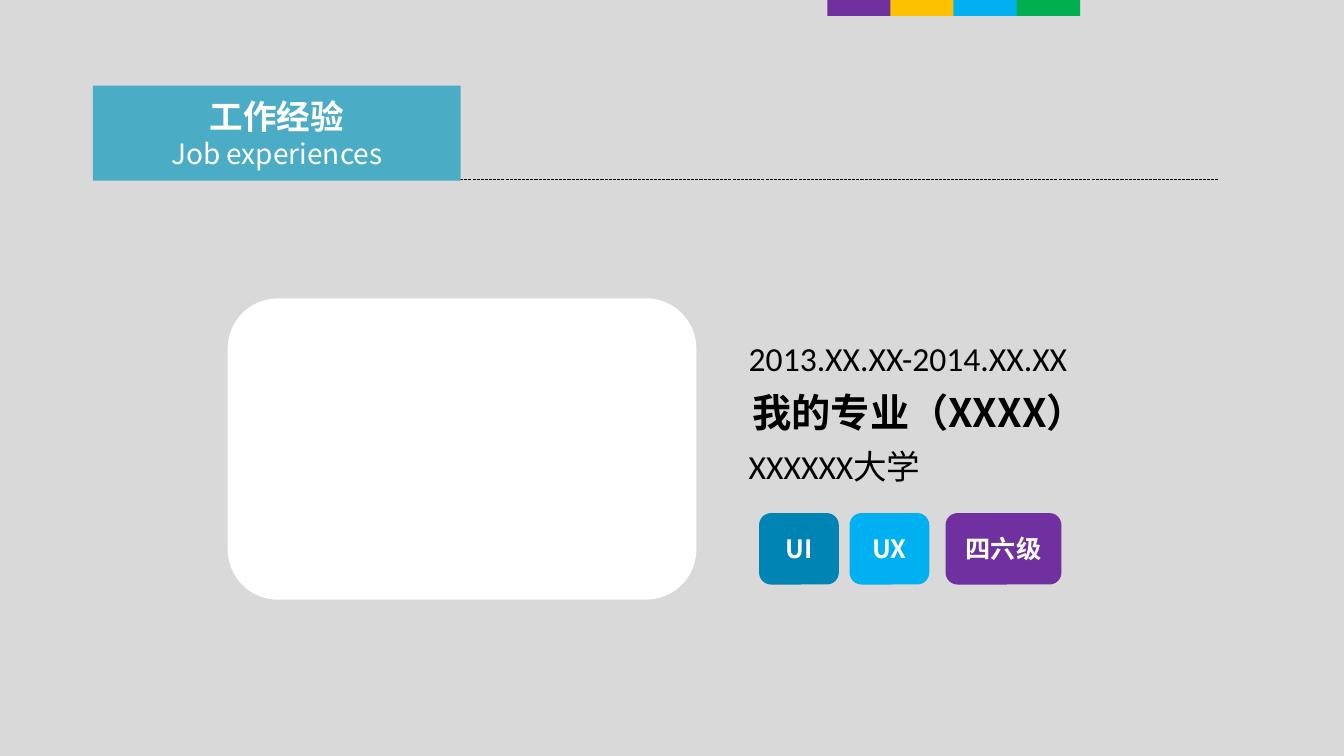
from pptx import Presentation
from pptx.dml.color import RGBColor
from pptx.enum.dml import MSO_LINE
from pptx.enum.shapes import MSO_CONNECTOR, MSO_SHAPE
from pptx.enum.text import MSO_ANCHOR, MSO_AUTO_SIZE, PP_ALIGN
from pptx.oxml.ns import qn
from pptx.util import Cm, Pt
from lxml.etree import SubElement

CJK_FONT = "Noto Sans CJK SC"
color = RGBColor.from_string


def add_block(kind, left, top, width, height, fill):
    block = slide.shapes.add_shape(kind, Cm(left), Cm(top), Cm(width), Cm(height))
    block.shadow.inherit = False
    block.fill.solid()
    block.fill.fore_color.rgb = color(fill)
    block.line.fill.background()
    return block


def write(para, text, size, ink, bold, font=CJK_FONT):
    para.text = text
    for span in para.runs:
        span.font.size = Pt(size)
        span.font.bold = bold
        span.font.color.rgb = color(ink)
        span.font.name = font
        SubElement(span.font._element, qn("a:ea"), typeface=CJK_FONT)


deck = Presentation()
deck.slide_width, deck.slide_height = Cm(33.87), Cm(19.05)
slide = deck.slides.add_slide(deck.slide_layouts[5])
slide.background.fill.solid()
slide.background.fill.fore_color.rgb = color("D9D9D9")

# Colour strip at the top edge
for index, fill in enumerate(["7030A0", "FFC000", "00B0F0", "00B050"]):
    add_block(MSO_SHAPE.RECTANGLE, 20.85 + 1.59 * index, 0, 1.6, 0.4, fill)

# Dashed rule under the heading
rule = slide.shapes.add_connector(
    MSO_CONNECTOR.STRAIGHT, Cm(2.34), Cm(4.52), Cm(30.73), Cm(4.52))
rule.line.color.rgb = color("0D0D0D")
rule.line.width = Pt(0.75)
rule.line.dash_style = MSO_LINE.SQUARE_DOT
SubElement(rule._element.spPr, qn("a:effectLst"))

# Heading, in front of the rule
title = slide.shapes.title
slide.shapes._spTree.append(title._element)
title.left, title.top, title.width, title.height = Cm(2.34), Cm(2.16), Cm(9.27), Cm(2.39)
title.fill.solid()
title.fill.fore_color.rgb = color("4BACC6")
frame = title.text_frame
frame.auto_size = MSO_AUTO_SIZE.NONE
frame.vertical_anchor = MSO_ANCHOR.MIDDLE
write(frame.paragraphs[0], "工作经验", 24, "FFFFFF", True)
write(frame.add_paragraph(), "Job experiences", 20, "FFFFFF", False)
for para in frame.paragraphs:
    para.alignment = PP_ALIGN.CENTER
    para.line_spacing = 1.0
    para.space_before = Pt(0)

# Empty photo panel
add_block(MSO_SHAPE.ROUNDED_RECTANGLE, 5.74, 7.52, 11.81, 7.59, "FFFFFF")

# Period, major and school
details = [
    ("2013.XX.XX-2014.XX.XX", 18.62, 8.38, 9.22, 1.27, 24, False, "Calibri"),
    ("我的专业（XXXX）", 18.72, 9.65, 9.6, 1.45, 28, True, CJK_FONT),
    ("XXXXXX大学", 18.62, 11.1, 5.41, 1.27, 24, False, "Calibri"),
]
for text, left, top, width, height, size, bold, font in details:
    box = slide.shapes.add_textbox(Cm(left), Cm(top), Cm(width), Cm(height))
    box.text_frame.word_wrap = True
    box.text_frame.auto_size = MSO_AUTO_SIZE.SHAPE_TO_FIT_TEXT
    write(box.text_frame.paragraphs[0], text, size, "000000", bold, font)

# Skill badges
badges = [
    ("UI", 19.13, 2.01, "0084B4"),
    ("UX", 21.41, 2.01, "00B0F0"),
    ("四六级", 23.83, 2.92, "7030A0"),
]
for text, left, width, fill in badges:
    badge = add_block(MSO_SHAPE.ROUNDED_RECTANGLE, left, 12.93, width, 1.8, fill)
    badge.text_frame.vertical_anchor = MSO_ANCHOR.MIDDLE
    para = badge.text_frame.paragraphs[0]
    write(para, text, 18, "FFFFFF", True)
    para.alignment = PP_ALIGN.CENTER

deck.save("out.pptx")
